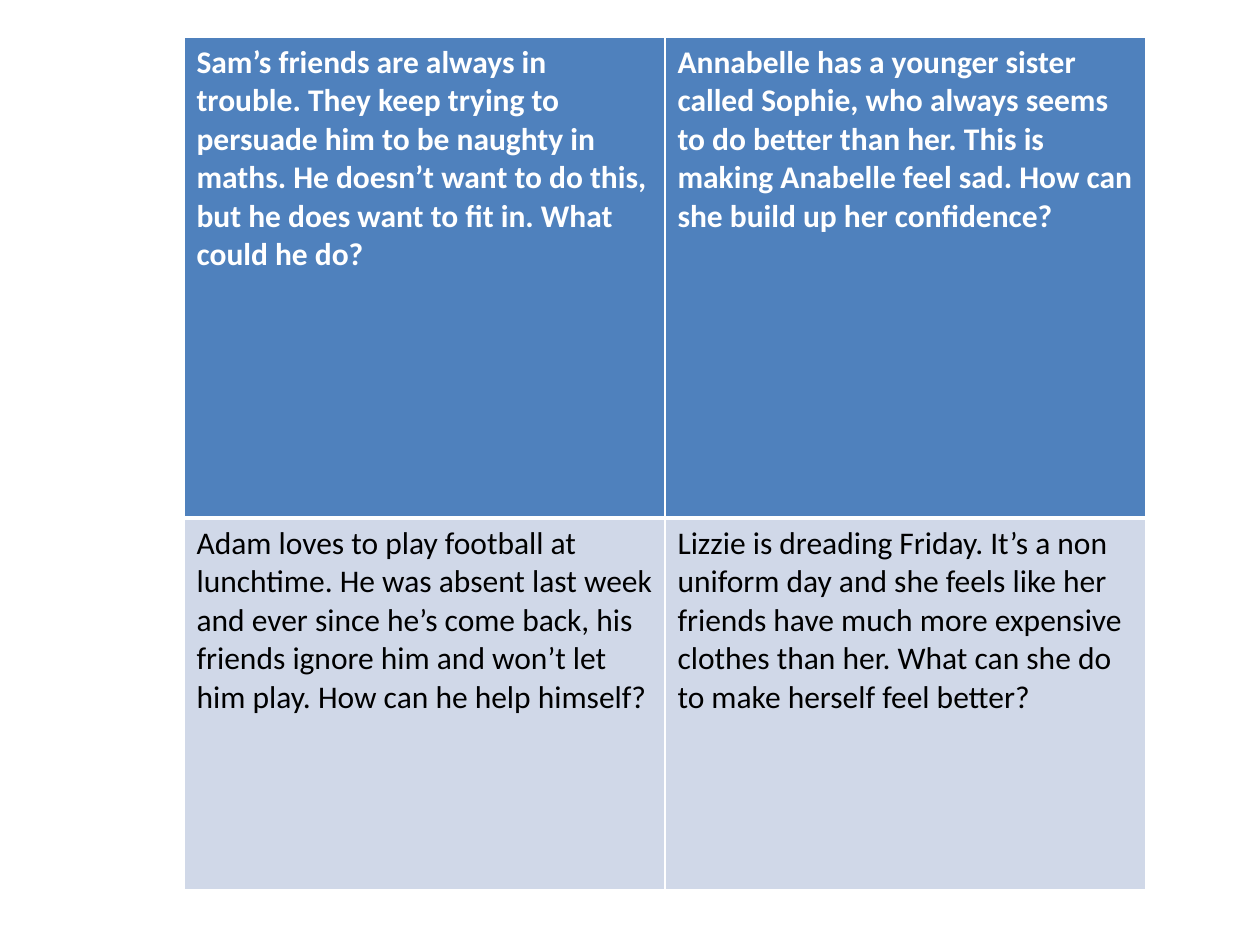
from lxml import etree
from pptx import Presentation
from pptx import util as u
from pptx.dml.color import RGBColor
from pptx.oxml.ns import qn

PX = u.Inches(10) / 1260
COLORS = {"white": "FFFFFF", "black": "000000", "header": "4F81BD", "body": "D0D8E8"}
SCENARIOS = [
    [
        "Sam’s friends are always in trouble. They keep trying to persuade him to be naughty in maths. "
        "He doesn’t want to do this, but he does want to fit in. What could he do?",
        "Annabelle has a younger sister called Sophie, who always seems to do better than her. "
        "This is making Anabelle feel sad. How can she build up her confidence?",
    ],
    [
        "Adam loves to play football at lunchtime. He was absent last week and ever since he’s come back, "
        "his friends ignore him and won’t let him play. How can he help himself?",
        "Lizzie is dreading Friday. It’s a non uniform day and she feels like her friends have much more "
        "expensive clothes than her. What can she do to make herself feel better?",
    ],
]
COL_WIDTH = 481
ROW_HEIGHTS = [481, 372]


def px(n):
    return u.Emu(round(n * PX))


def color(name):
    return RGBColor.from_string(COLORS[name])


def set_borders(cell, widths):
    tc_pr = cell._tc.get_or_add_tcPr()
    for side, width in widths.items():
        ln = etree.SubElement(tc_pr, qn(f"a:ln{side}"), w=str(u.Pt(width)))
        fill = etree.SubElement(ln, qn("a:solidFill"))
        etree.SubElement(fill, qn("a:srgbClr"), val=COLORS["white"])


def fill_cell(cell, words, is_header):
    set_borders(cell, {"L": 1, "R": 1, "T": 1 if is_header else 3, "B": 3 if is_header else 1})
    cell.fill.solid()
    cell.fill.fore_color.rgb = color("header" if is_header else "body")
    r = cell.text_frame.paragraphs[0].add_run()
    r.text = words
    r.font.name = "Calibri"
    r.font.size = u.Pt(18)
    r.font.bold = is_header
    r.font.color.rgb = color("white" if is_header else "black")


def add_scenario_table(s):
    cols = len(SCENARIOS[0])
    table = s.shapes.add_table(
        len(SCENARIOS), cols, px(184), px(37), px(COL_WIDTH * cols), px(sum(ROW_HEIGHTS))
    ).table
    for col in table.columns:
        col.width = px(COL_WIDTH)
    for i, (height, scenarios) in enumerate(zip(ROW_HEIGHTS, SCENARIOS)):
        table.rows[i].height = px(height)
        for j, words in enumerate(scenarios):
            fill_cell(table.cell(i, j), words, i == 0)


def main():
    prs = Presentation()
    prs.slide_width, prs.slide_height = px(1260), px(945)
    s = prs.slides.add_slide(prs.slide_layouts[6])
    add_scenario_table(s)
    prs.save("out.pptx")


if __name__ == "__main__":
    main()
